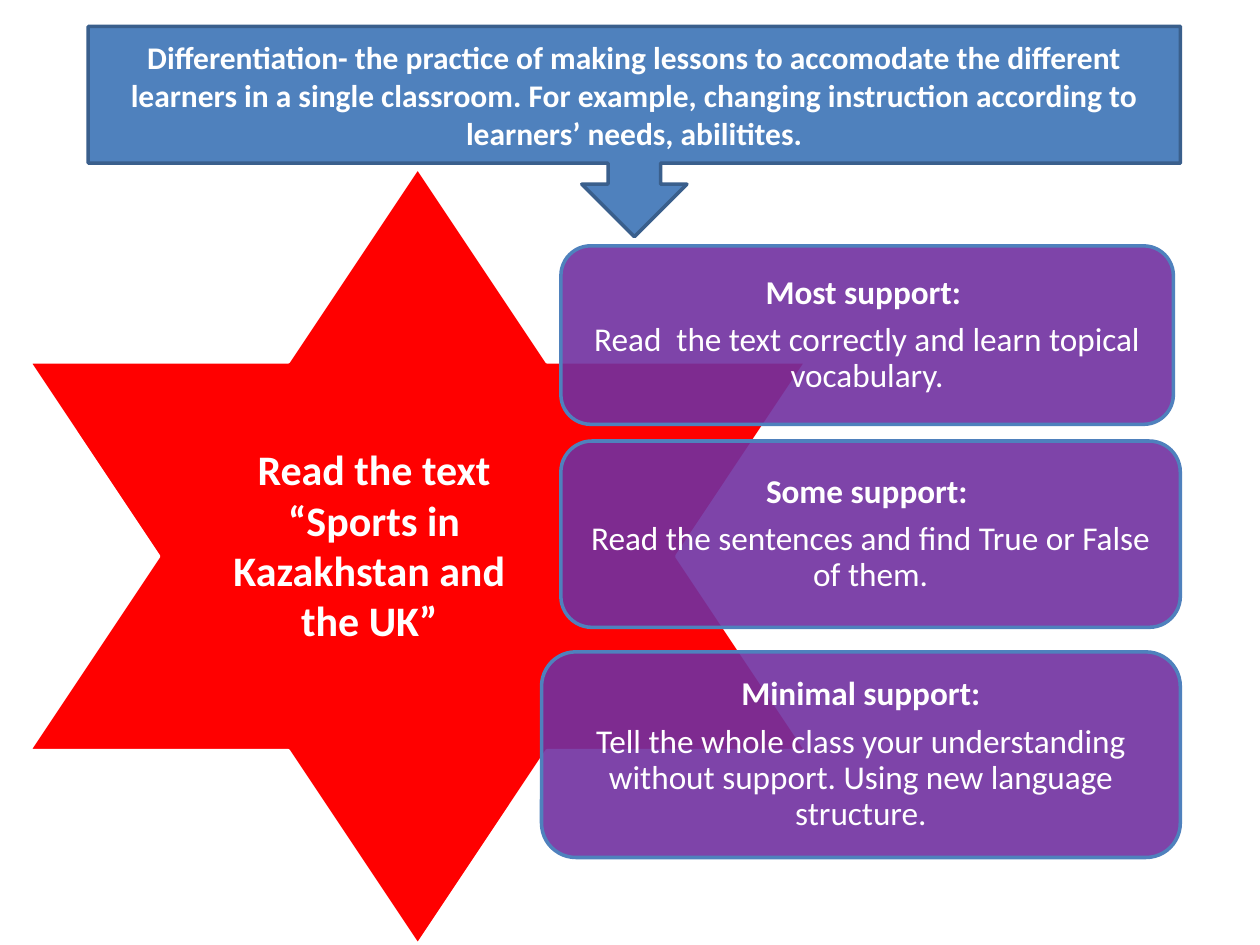
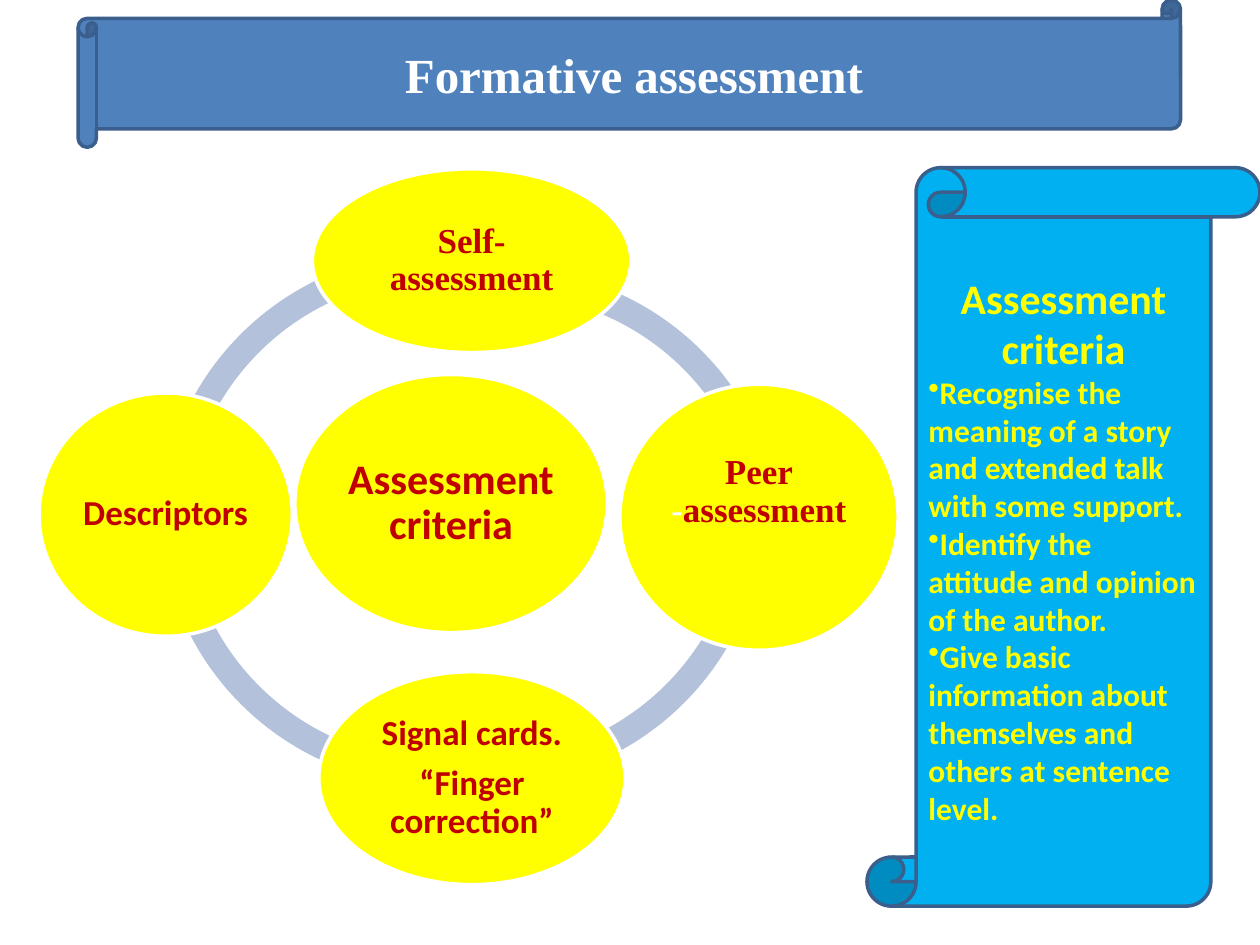
from lxml import etree
from pptx import Presentation
from pptx import util as u
from pptx.dml import color as dml
from pptx.enum import shapes, text
from pptx.oxml import ns

Pt = u.Pt
KIND = shapes.MSO_SHAPE
COLORS = {
    "white": "FFFFFF", "red": "FF0000", "purple": "7030A0", "blue": "4F81BD",
    "navy": "3A5F8C", "yellow": "FFFF00", "dark red": "C00000",
    "pale blue": "B3C1DB", "sky": "00B0F0",
}
SERIF = "Times New Roman"

# Content of slide 1: boxes are left, top, width, height
DEFINITION = (
    "Differentiation- the practice of making lessons to accomodate the different "
    "learners in a single classroom. For example, changing instruction according "
    "to learners’ needs, abilitites."
)
TASK = ["Read the text “Sports in Kazakhstan and ", "the UK” "]
SUPPORT_CARDS = [
    ("Most support: ", "Read  the text correctly and learn topical vocabulary.",
     (320.5, 140.5, 350, 102)),
    ("Some support: ", "Read the sentences and find True or False of them.",
     (320.5, 252, 354, 106.5)),
    ("Minimal support:", "Tell the whole class your understanding without support. "
     "Using new language structure.", (309.5, 372.5, 365, 117.5)),
]

# Content of slide 2
ARC_SIZE = 320.4
ARCS = [  # left, top, start angle, end angle (degrees)
    (90.7, 144, 183.57, 276.86),
    (90.7, 128.9, 83.4, 178.09),
    (117.4, 128.2, 2.44, 93.07),
    (127.4, 153.4, 267.04, 356.33),
]
METHODS = [  # paragraphs, box, text format
    (["Assessment criteria"], (168.5, 214, 178.5, 147.5), {"size": 24}),
    (["Self-assessment"], (178.5, 96.5, 182, 105), {"font": SERIF}),
    ([["Peer", (" -", {"color": "white"}), "assessment"]],
     (354.2, 219.6, 159, 152), {"font": SERIF, "insets": (2, 2, 2, 31)}),
    (["Signal cards.", "“Finger correction”"], (182.2, 383.8, 175, 121.7), {}),
    (["Descriptors"], (22.3, 224.6, 144.7, 139), {}),
]
CRITERIA_TITLE = "Assessment criteria"
CRITERIA = [
    "Recognise the meaning of a story and extended talk with some support.",
    "Identify the attitude and opinion of the author.",
    "Give basic information about themselves and others at sentence level.",
]


def rgb(name):
    return dml.RGBColor.from_string(COLORS[name])


def add_bullet(paragraph):
    properties = paragraph._p.get_or_add_pPr()
    properties.set("marL", "0")
    properties.set("indent", "0")
    etree.SubElement(properties, ns.qn("a:buChar")).set("char", "•")


def write(frame, paragraphs, *, size=20, font="Calibri", color="white", bold=True,
          line_spacing=None, space_after=None, insets=None, anchor="MIDDLE"):
    """Each paragraph is a string, or a list of strings and (text, format) runs."""
    frame.word_wrap = True
    frame.vertical_anchor = text.MSO_ANCHOR[anchor]
    if insets:
        (frame.margin_left, frame.margin_top,
         frame.margin_right, frame.margin_bottom) = map(Pt, insets)
    for index, runs in enumerate(paragraphs):
        paragraph = frame.add_paragraph() if index else frame.paragraphs[0]
        paragraph.alignment = text.PP_ALIGN.CENTER
        if line_spacing:
            paragraph.line_spacing = line_spacing
        if space_after is not None:
            paragraph.space_after = Pt(space_after)
        for item in [runs] if isinstance(runs, str) else runs:
            words, changes = (item, {}) if isinstance(item, str) else item
            run = paragraph.add_run()
            run.text = words
            run.font.name = font
            run.font.size = Pt(changes.get("size", size))
            run.font.bold = changes.get("bold", bold)
            run.font.color.rgb = rgb(changes.get("color", color))


def add_figure(slide, kind, box, fill, line=None, opacity=None):
    shape = slide.shapes.add_shape(kind, *map(Pt, box))
    shape.shadow.inherit = False
    shape.fill.solid()
    shape.fill.fore_color.rgb = rgb(fill)
    if opacity:
        color = shape._element.spPr.find(".//" + ns.qn("a:srgbClr"))
        etree.SubElement(color, ns.qn("a:alpha")).set("val", str(opacity * 1000))
    if line:
        shape.line.color.rgb = rgb(line)
        shape.line.width = Pt(2)
    else:
        shape.line.fill.background()
    return shape


def build_differentiation(slide):
    # Star and support cards
    add_figure(slide, KIND.STAR_6_POINT, (16.6, 95.8, 444.2, 444.2), "red", "white")
    for heading, body, box in SUPPORT_CARDS:
        card = add_figure(slide, KIND.ROUNDED_RECTANGLE, box, "purple", "blue", 90)
        write(card.text_frame, [heading, [(body, {"bold": False})]], size=19,
              line_spacing=0.9, space_after=6.65, insets=(5.8,) * 4)

    # Task over the star
    task = slide.shapes.add_textbox(Pt(118), Pt(250), Pt(191.5), Pt(152))
    write(task.text_frame, TASK, size=24, anchor="TOP")

    # Definition
    callout = add_figure(slide, KIND.DOWN_ARROW_CALLOUT, (50.4, 15.1, 624.2, 120.2),
                         "blue", "navy")
    write(callout.text_frame, [DEFINITION], size=18)


def build_assessment(slide):
    # Ring of arcs; adjustments hold angles in 60000ths over 100000
    for left, top, start, end in ARCS:
        arc = add_figure(slide, KIND.BLOCK_ARC, (left, top, ARC_SIZE, ARC_SIZE),
                         "pale blue")
        for index, value in enumerate((start * 0.6, end * 0.6, 0.046)):
            arc.adjustments[index] = value

    # Assessment methods
    for paragraphs, box, changes in METHODS:
        ellipse = add_figure(slide, KIND.OVAL, box, "yellow", "white")
        style = {"color": "dark red", "line_spacing": 0.9, "space_after": 7,
                 "insets": (2,) * 4}
        write(ellipse.text_frame, paragraphs, **{**style, **changes})

    # Title scroll
    title = add_figure(slide, KIND.HORIZONTAL_SCROLL, (44.6, 0, 630, 84.2),
                       "blue", "navy")
    write(title.text_frame, ["Formative assessment"], size=28, font=SERIF)

    # Criteria scroll
    scroll = add_figure(slide, KIND.VERTICAL_SCROLL, (495.4, 95.8, 224.6, 422),
                        "sky", "navy")
    heading = [(CRITERIA_TITLE, {"size": 24})]
    write(scroll.text_frame, [heading, *CRITERIA], size=18, color="yellow")
    for paragraph in scroll.text_frame.paragraphs[1:]:
        paragraph.alignment = text.PP_ALIGN.LEFT
        add_bullet(paragraph)


def main():
    presentation = Presentation()
    presentation.slide_width, presentation.slide_height = Pt(720), Pt(540)
    for build in (build_differentiation, build_assessment):
        build(presentation.slides.add_slide(presentation.slide_layouts[6]))
    presentation.save("out.pptx")


if __name__ == "__main__":
    main()
